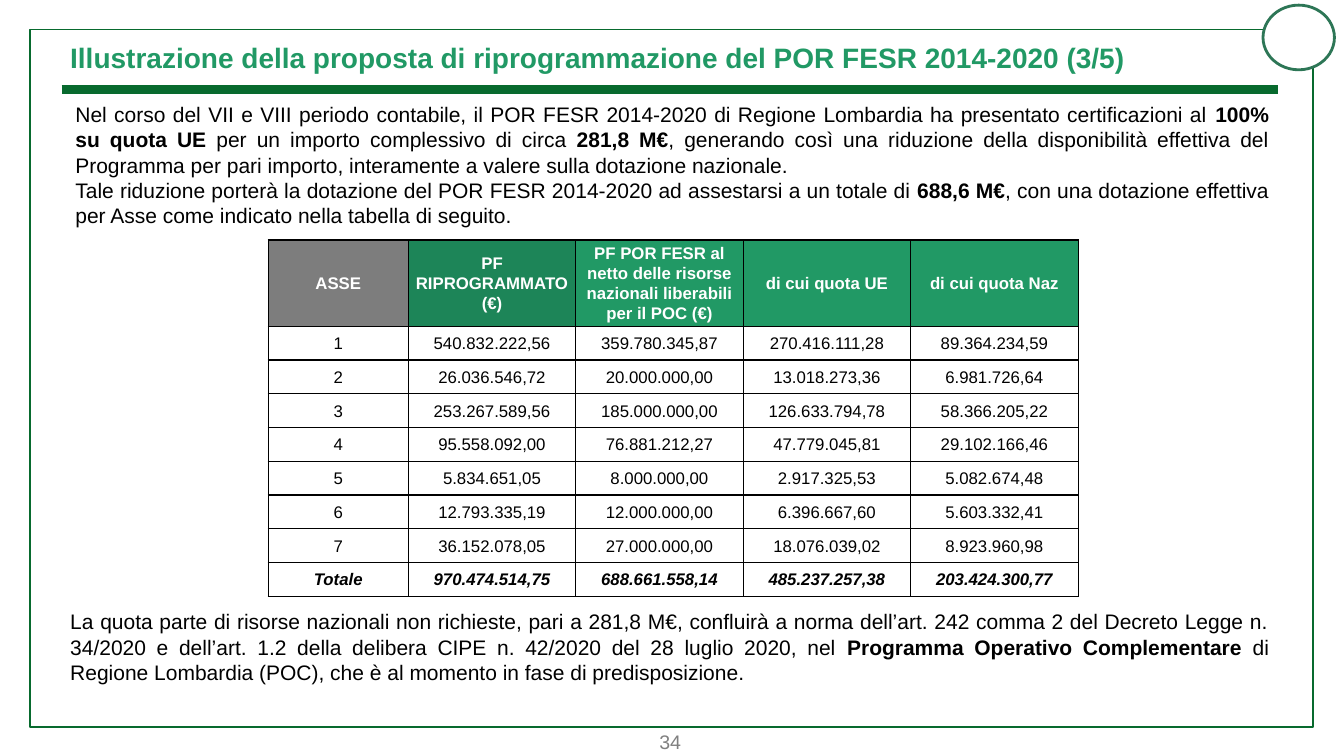
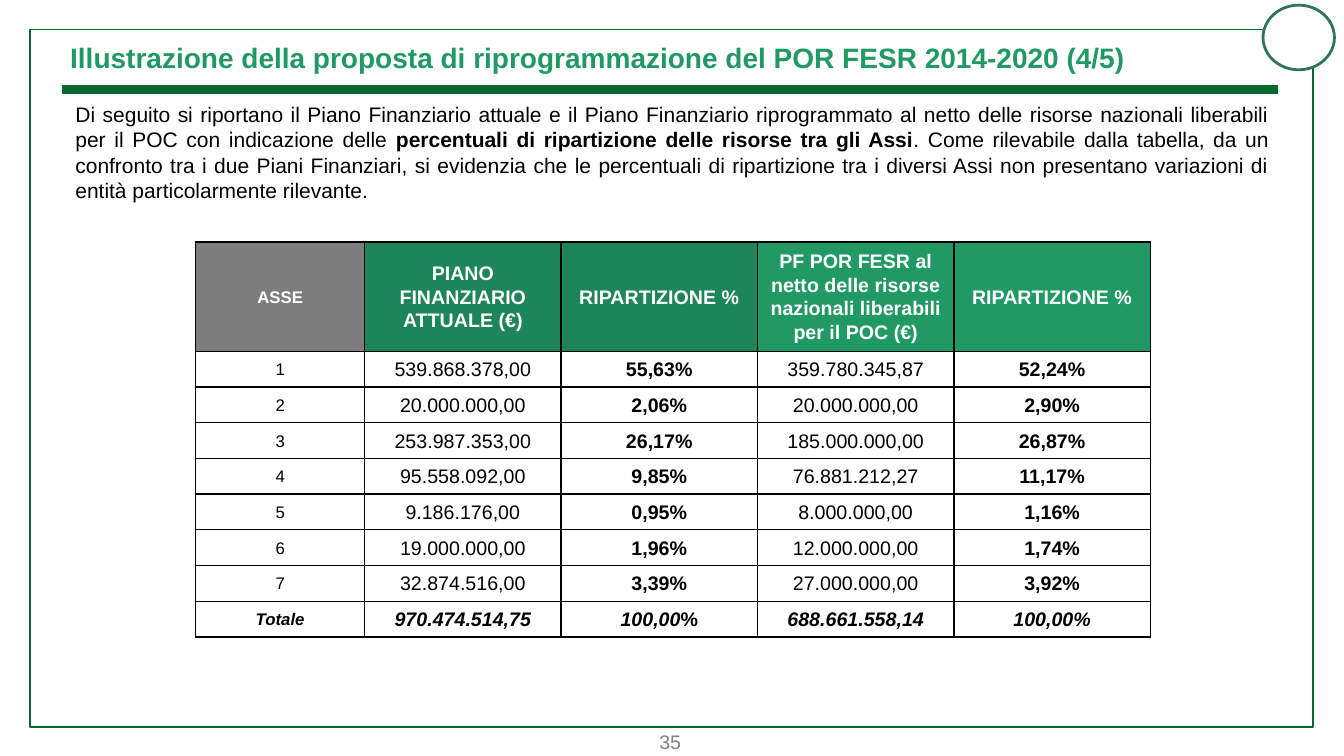
import dataclasses
import typing

import lxml.etree
import pptx
import pptx.dml.color
import pptx.enum.shapes
import pptx.enum.text
import pptx.oxml.ns
import pptx.util

Cm = pptx.util.Cm
Pt = pptx.util.Pt
ALIGN = pptx.enum.text.PP_ALIGN
ANCHOR = pptx.enum.text.MSO_ANCHOR
SHAPES = pptx.enum.shapes.MSO_SHAPE


@dataclasses.dataclass(frozen=True)
class Theme:
    """Colours and type sizes of the whole presentation."""

    font: str = "Arial"
    frame: str = "086A2E"
    badge: str = "2D7656"
    green: str = "219965"
    dark_green: str = "1D8558"
    grey: str = "7D7D7D"
    page_grey: str = "808080"
    black: str = "000000"
    white: str = "FFFFFF"
    title_size: int = 20
    body_size: int = 15
    page_size: int = 14
    table_size: int = 12
    large_table_size: int = 14


THEME = Theme()


class Span(typing.NamedTuple):
    """A stretch of text whose style differs from its paragraph."""

    text: str
    bold: typing.Optional[bool] = None
    italic: typing.Optional[bool] = None


class Column(typing.NamedTuple):
    """A table column with its heading and body style."""

    heading: str
    fill: str
    width: float
    size: int = THEME.table_size
    bold: bool = False


def rgb(colour):
    """Return the colour object of a hexadecimal string."""
    return pptx.dml.color.RGBColor.from_string(colour)


def write(paragraph, content, size, colour, align, bold=False, italic=False):
    """Write a string or a sequence of strings and spans in one paragraph."""
    for part in [content] if isinstance(content, str) else content:
        span = Span(part) if isinstance(part, str) else part
        run = paragraph.add_run()
        run.text = span.text
        if span.bold is not None:
            run.font.bold = span.bold
        if span.italic is not None:
            run.font.italic = span.italic
    paragraph.alignment = align
    font = paragraph.font
    font.name, font.size, font.color.rgb = THEME.font, Pt(size), rgb(colour)
    font.bold, font.italic = bold, italic


def add_text(slide, box, paragraphs, size, colour, align=ALIGN.LEFT, bold=False,
             indent=0, anchor=ANCHOR.TOP):
    """Add a wrapping text box and return its text frame."""
    frame = slide.shapes.add_textbox(*map(Cm, box)).text_frame
    frame.word_wrap = True
    frame.vertical_anchor = anchor
    for index, content in enumerate(paragraphs):
        paragraph = frame.add_paragraph() if index else frame.paragraphs[0]
        if indent:
            paragraph._p.get_or_add_pPr().set("marL", str(Cm(indent)))
        write(paragraph, content, size, colour, align, bold)
    return frame


def add_outline(slide, preset, box, colour, width, fill=None):
    """Add an outlined preset shape, hollow unless a fill is given."""
    shape = slide.shapes.add_shape(preset, *map(Cm, box))
    shape.shadow.inherit = False
    shape.line.color.rgb = rgb(colour)
    shape.line.width = Pt(width)
    if fill:
        shape.fill.solid()
        shape.fill.fore_color.rgb = rgb(fill)
    else:
        shape.fill.background()


def add_rule(slide, left, right, top, colour, width):
    """Add a horizontal rule."""
    rule = slide.shapes.add_connector(
        pptx.enum.shapes.MSO_CONNECTOR.STRAIGHT, Cm(left), Cm(top), Cm(right), Cm(top))
    rule.line.color.rgb = rgb(colour)
    rule.line.width = Pt(width)
    lxml.etree.SubElement(rule._element.spPr, pptx.oxml.ns.qn("a:effectLst"))


def add_page(deck, title, number):
    """Add a slide with the shared frame, title and page number."""
    slide = deck.slides.add_slide(deck.slide_layouts[6])
    add_rule(slide, 1.55, 32.21, 2.26, THEME.frame, 6)
    add_outline(slide, SHAPES.RECTANGLE, (0.76, 0.74, 32.33, 17.58), THEME.frame, 1)
    add_outline(slide, SHAPES.OVAL, (31.83, 0.13, 1.8, 1.63), THEME.badge, 2, THEME.white)
    page = add_text(slide, (16.46, 18.26, 0.86, 0.86), [str(number)],
                    THEME.page_size, THEME.page_grey, ALIGN.CENTER)
    page.word_wrap = False
    page.margin_left = page.margin_right = page.margin_top = page.margin_bottom = Cm(0.13)
    add_text(slide, (1.52, 0.89, 27.53, 1.12), [title],
             THEME.title_size, THEME.green, bold=True)
    return slide


def add_body(slide, box, paragraphs, indent=0, anchor=ANCHOR.TOP):
    """Add justified body text."""
    add_text(slide, box, paragraphs, THEME.body_size, THEME.black, ALIGN.JUSTIFY,
             indent=indent, anchor=anchor)


def add_borders(cell):
    """Draw thin black borders round a cell."""
    properties = cell._tc.get_or_add_tcPr()
    for side in ("a:lnL", "a:lnR", "a:lnT", "a:lnB"):
        border = lxml.etree.SubElement(properties, pptx.oxml.ns.qn(side), w=str(Pt(1)))
        solid = lxml.etree.SubElement(border, pptx.oxml.ns.qn("a:solidFill"))
        lxml.etree.SubElement(solid, pptx.oxml.ns.qn("a:srgbClr"), val=THEME.black)


def fill_cell(cell, content, size, colour, bold, italic=False, fill=None):
    """Write and style one table cell."""
    add_borders(cell)
    if fill:
        cell.fill.solid()
        cell.fill.fore_color.rgb = rgb(fill)
    else:
        cell.fill.background()
    cell.vertical_anchor = ANCHOR.MIDDLE
    cell.margin_left = cell.margin_right = Cm(0.13)
    cell.margin_top = cell.margin_bottom = 0
    paragraph = cell.text_frame.paragraphs[0]
    paragraph.line_spacing = 1.07
    paragraph.space_after = Pt(8)
    write(paragraph, content, size, colour, ALIGN.CENTER, bold, italic)


def add_finance_table(slide, left, top, heading_height, row_height, columns, rows):
    """Add a table by Asse whose last row holds the totals."""
    width = sum(column.width for column in columns)
    height = heading_height + row_height * len(rows)
    table = slide.shapes.add_table(
        len(rows) + 1, len(columns), Cm(left), Cm(top), Cm(width), Cm(height)).table
    table.first_row = table.horz_banding = False
    table.rows[0].height = Cm(heading_height)
    for index, column in enumerate(columns):
        table.columns[index].width = Cm(column.width)
        fill_cell(table.cell(0, index), column.heading, column.size, THEME.white,
                  bold=True, fill=column.fill)
    for row_index, values in enumerate(rows, 1):
        table.rows[row_index].height = Cm(row_height)
        is_total = row_index == len(rows)
        for index, (column, value) in enumerate(zip(columns, values)):
            fill_cell(table.cell(row_index, index), value, column.size, THEME.black,
                      column.bold or is_total, is_total)


TITLE = "Illustrazione della proposta di riprogrammazione del POR FESR 2014-2020 ({}/5)"
NET_HEADING = "PF POR FESR al netto delle risorse nazionali liberabili per il POC (€)"


def add_net_resources_page(deck):
    """Add the slide on resources net of the national share."""
    slide = add_page(deck, TITLE.format(3), 34)
    add_body(slide, (1.14, 2.44, 31.09, 3.45), [
        ("Nel corso del VII e VIII periodo contabile, il POR FESR 2014-2020 di Regione "
         "Lombardia ha presentato certificazioni al ",
         Span("100% su quota UE", bold=True),
         " per un importo complessivo di circa ",
         Span("281,8 M€", bold=True),
         ", generando così una riduzione della disponibilità effettiva del Programma per "
         "pari importo, interamente a valere sulla dotazione nazionale."),
        ("Tale riduzione porterà la dotazione del POR FESR 2014-2020 ad assestarsi a un "
         "totale di ",
         Span("688,6 M€", bold=True),
         ", con una dotazione effettiva per Asse come indicato nella tabella di seguito."),
    ], indent=0.51)
    columns = [
        Column("ASSE", THEME.grey, 3.53),
        Column("PF RIPROGRAMMATO (€)", THEME.dark_green, 4.22),
        Column(NET_HEADING, THEME.green, 4.22),
        Column("di cui quota UE", THEME.green, 4.22),
        Column("di cui quota Naz", THEME.green, 4.22),
    ]
    rows = [
        ("1", "540.832.222,56", "359.780.345,87", "270.416.111,28", "89.364.234,59"),
        ("2", "26.036.546,72", "20.000.000,00", "13.018.273,36", "6.981.726,64"),
        ("3", "253.267.589,56", "185.000.000,00", "126.633.794,78", "58.366.205,22"),
        ("4", "95.558.092,00", "76.881.212,27", "47.779.045,81", "29.102.166,46"),
        ("5", "5.834.651,05", "8.000.000,00", "2.917.325,53", "5.082.674,48"),
        ("6", "12.793.335,19", "12.000.000,00", "6.396.667,60", "5.603.332,41"),
        ("7", "36.152.078,05", "27.000.000,00", "18.076.039,02", "8.923.960,98"),
        ("Totale", "970.474.514,75", "688.661.558,14", "485.237.257,38", "203.424.300,77"),
    ]
    add_finance_table(slide, 6.76, 6.05, 1.8, 0.85, columns, rows)
    add_body(slide, (1.52, 15.29, 30.71, 2.01), [
        ("La quota parte di risorse nazionali non richieste, pari a 281,8 M€, confluirà a "
         "norma dell’art. 242 comma 2 del Decreto Legge n. 34/2020 e dell’art. 1.2 della "
         "delibera CIPE n. 42/2020 del 28 luglio 2020, nel ",
         Span("Programma Operativo Complementare", bold=True),
         " di Regione Lombardia (POC), che è al momento in fase di predisposizione."),
    ], anchor=ANCHOR.MIDDLE)


def add_shares_page(deck):
    """Add the slide comparing the shares of each Asse."""
    slide = add_page(deck, TITLE.format(4), 35)
    add_body(slide, (1.14, 2.44, 31.09, 2.82), [
        ("Di seguito si riportano il Piano Finanziario attuale e il Piano Finanziario "
         "riprogrammato al netto delle risorse nazionali liberabili per il POC con "
         "indicazione delle ",
         Span("percentuali di ripartizione delle risorse tra gli Assi", bold=True),
         ". Come rilevabile dalla tabella, da un confronto tra i due Piani Finanziari, si "
         "evidenzia che le percentuali di ripartizione tra i diversi Assi non presentano "
         "variazioni di entità particolarmente rilevante."),
    ], indent=0.51)
    large = THEME.large_table_size
    columns = [
        Column("ASSE", THEME.grey, 4.26),
        Column("PIANO FINANZIARIO ATTUALE (€)", THEME.dark_green, 4.95, large),
        Column("RIPARTIZIONE %", THEME.dark_green, 4.95, large, bold=True),
        Column(NET_HEADING, THEME.green, 4.95, large),
        Column("RIPARTIZIONE %", THEME.green, 4.95, large, bold=True),
    ]
    rows = [
        ("1", "539.868.378,00", "55,63%", "359.780.345,87", "52,24%"),
        ("2", "20.000.000,00", "2,06%", "20.000.000,00", "2,90%"),
        ("3", "253.987.353,00", "26,17%", "185.000.000,00", "26,87%"),
        ("4", "95.558.092,00", "9,85%", "76.881.212,27", "11,17%"),
        ("5", "9.186.176,00", "0,95%", "8.000.000,00", "1,16%"),
        ("6", "19.000.000,00", "1,96%", "12.000.000,00", "1,74%"),
        ("7", "32.874.516,00", "3,39%", "27.000.000,00", "3,92%"),
        ("Totale", "970.474.514,75", ("100,00", Span("%", italic=False)),
         "688.661.558,14", "100,00%"),
    ]
    add_finance_table(slide, 4.93, 6.1, 2.75, 0.9, columns, rows)


def main():
    """Build and save the presentation."""
    deck = pptx.Presentation()
    deck.slide_width, deck.slide_height = Cm(33.87), Cm(19.05)
    add_net_resources_page(deck)
    add_shares_page(deck)
    deck.save("out.pptx")


if __name__ == "__main__":
    main()
